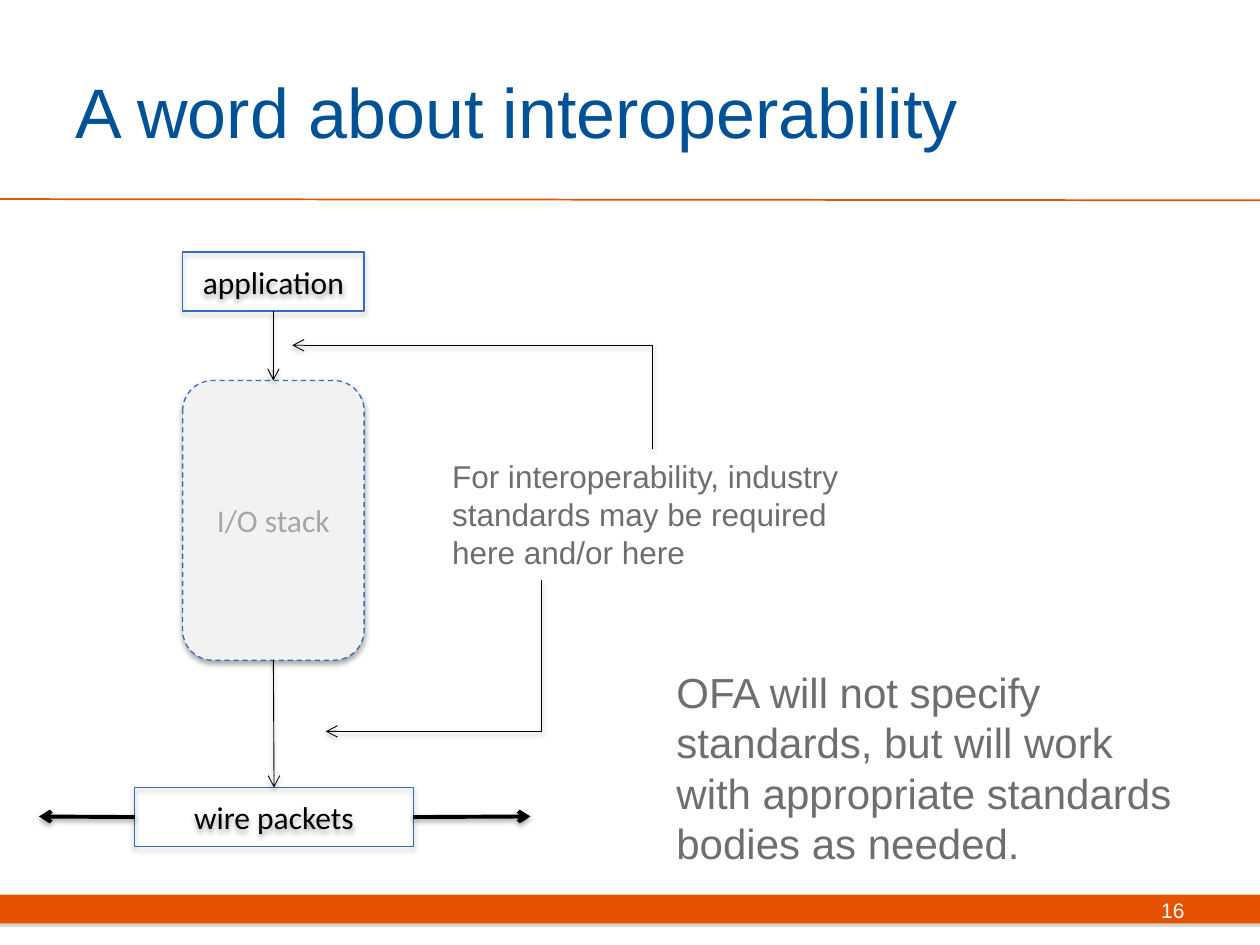
"""Build the interoperability slide with its I/O stack diagram."""
from lxml.etree import SubElement
from pptx import Presentation
from pptx.dml.color import RGBColor
from pptx.enum.dml import MSO_LINE
from pptx.enum.shapes import MSO_CONNECTOR, MSO_SHAPE
from pptx.enum.text import MSO_ANCHOR, PP_ALIGN
from pptx.oxml.ns import qn
from pptx.util import Inches, Pt

ORANGE = RGBColor(0xE5, 0x53, 0x02)
TITLE_BLUE = RGBColor(0x00, 0x51, 0x95)
OUTLINE_BLUE = RGBColor(0x38, 0x6C, 0xBC)
TEXT_GRAY = RGBColor(0x6D, 0x6E, 0x71)
MUTED_GRAY = RGBColor(0xA6, 0xA6, 0xA6)
STACK_GRAY = RGBColor(0xF2, 0xF2, 0xF2)
SHADOW_GRAY = RGBColor(0x80, 0x80, 0x80)
BLACK = RGBColor(0, 0, 0)
WHITE = RGBColor(0xFF, 0xFF, 0xFF)


def add_shadow(shape, color, alpha, blur, distance):
    effects = SubElement(shape._element.spPr, qn("a:effectLst"))
    shadow = SubElement(effects, qn("a:outerShdw"), blurRad=str(Pt(blur)),
                        dist=str(Pt(distance)), dir="5400000", rotWithShape="0")
    tint = SubElement(shadow, qn("a:srgbClr"), val=str(color))
    SubElement(tint, qn("a:alpha"), val=str(alpha * 1000))


def write(shape, text, size, color, font="Arial", align=PP_ALIGN.LEFT,
          anchor=MSO_ANCHOR.MIDDLE):
    frame = shape.text_frame
    frame.text = text
    frame.word_wrap = True
    frame.vertical_anchor = anchor
    paragraph = frame.paragraphs[0]
    paragraph.alignment = align
    run_font = paragraph.runs[0].font
    run_font.name = font
    run_font.size = Pt(size)
    run_font.color.rgb = color


def add_text(slide, box, text, size, color, **layout):
    write(slide.shapes.add_textbox(*map(Inches, box)), text, size, color, **layout)


def add_stage(slide, box, text, color=BLACK, kind=MSO_SHAPE.RECTANGLE):
    stage = slide.shapes.add_shape(kind, *map(Inches, box))
    stage.fill.background()
    stage.line.color.rgb = OUTLINE_BLUE
    stage.line.width = Pt(0.75)
    add_shadow(stage, BLACK, 35, 3.1, 1.8)
    write(stage, text, 18, color, "Calibri", PP_ALIGN.CENTER)
    return stage


def add_line(slide, start, end, color=BLACK, width=0.5, kind=MSO_CONNECTOR.STRAIGHT):
    line = slide.shapes.add_connector(kind, *map(Inches, start + end))
    line.line.color.rgb = color
    line.line.width = Pt(width)
    return line


def add_arrow(slide, start, end, width=0.5, tip="tailEnd", kind=MSO_CONNECTOR.STRAIGHT):
    arrow = add_line(slide, start, end, width=width, kind=kind)
    SubElement(arrow.line._get_or_add_ln(), qn(f"a:{tip}"), type="arrow")
    add_shadow(arrow, BLACK, 38, 3.1, 1.6)
    return arrow


def add_corner_arrow(slide, start, end, tip, quarter_turns=0):
    arrow = add_arrow(slide, start, end, tip=tip, kind=MSO_CONNECTOR.ELBOW)
    properties = arrow._element.spPr
    properties.find(qn("a:prstGeom")).set("prst", "bentConnector2")
    properties.find(qn("a:xfrm")).set("rot", str(quarter_turns * 5400000))


def add_page_frame(slide):
    footer = slide.shapes.add_shape(
        MSO_SHAPE.RECTANGLE, *map(Inches, (0, 7.1, 10, 0.23)))
    footer.fill.solid()
    footer.fill.fore_color.rgb = ORANGE
    footer.line.fill.background()
    add_shadow(footer, SHADOW_GRAY, 35, 0, 1.8)
    rule = add_line(slide, (0, 1.58), (10, 1.59), ORANGE, 1)
    SubElement(rule._element.spPr, qn("a:effectLst"))
    add_text(slide, (0.5, 0.25, 8.17, 1.25), "A word about interoperability",
             40, TITLE_BLUE)
    add_text(slide, (7.17, 7.02, 2.33, 0.4), "16", 12, WHITE, align=PP_ALIGN.RIGHT)


def add_stack_diagram(slide):
    application = add_stage(slide, (1.45, 2, 1.44, 0.47), "application")
    wire = add_stage(slide, (1.07, 6.25, 2.21, 0.47), "wire packets")
    stack = add_stage(slide, (1.45, 3.02, 1.44, 2.22), "I/O stack", MUTED_GRAY,
                      MSO_SHAPE.ROUNDED_RECTANGLE)
    stack.fill.solid()
    stack.fill.fore_color.rgb = STACK_GRAY
    stack.line.dash_style = MSO_LINE.DASH

    for upper, lower in ((application, stack), (stack, wire)):
        flow = add_arrow(slide, (2.17, 2.47), (2.17, 3.02))
        flow.begin_connect(upper, 2)
        flow.end_connect(lower, 0)
    for side, edge, tip in ((1, 1.07, 0.31), (3, 3.28, 4.21)):
        link = add_arrow(slide, (edge, 6.48), (tip, 6.48), 2.25)
        link.begin_connect(wire, side)


def add_notes_on_standards(slide):
    add_text(slide, (3.49, 3.58, 3.46, 1.01),
             "For interoperability, industry standards may be required here and/or here",
             18, TEXT_GRAY, anchor=MSO_ANCHOR.TOP)
    add_corner_arrow(slide, (2.84, 4.35), (4.04, 6.06), "tailEnd", quarter_turns=1)
    add_corner_arrow(slide, (2.32, 2.74), (5.18, 3.56), "headEnd")
    add_text(slide, (5.27, 5.24, 4.21, 1.72),
             "OFA will not specify standards, but will work with appropriate "
             "standards bodies as needed.",
             24, TEXT_GRAY, anchor=MSO_ANCHOR.TOP)


def main():
    deck = Presentation()
    deck.slide_width, deck.slide_height = Inches(10), Inches(7.5)
    slide = deck.slides.add_slide(deck.slide_layouts[6])
    add_page_frame(slide)
    add_stack_diagram(slide)
    add_notes_on_standards(slide)
    deck.save("out.pptx")


if __name__ == "__main__":
    main()
